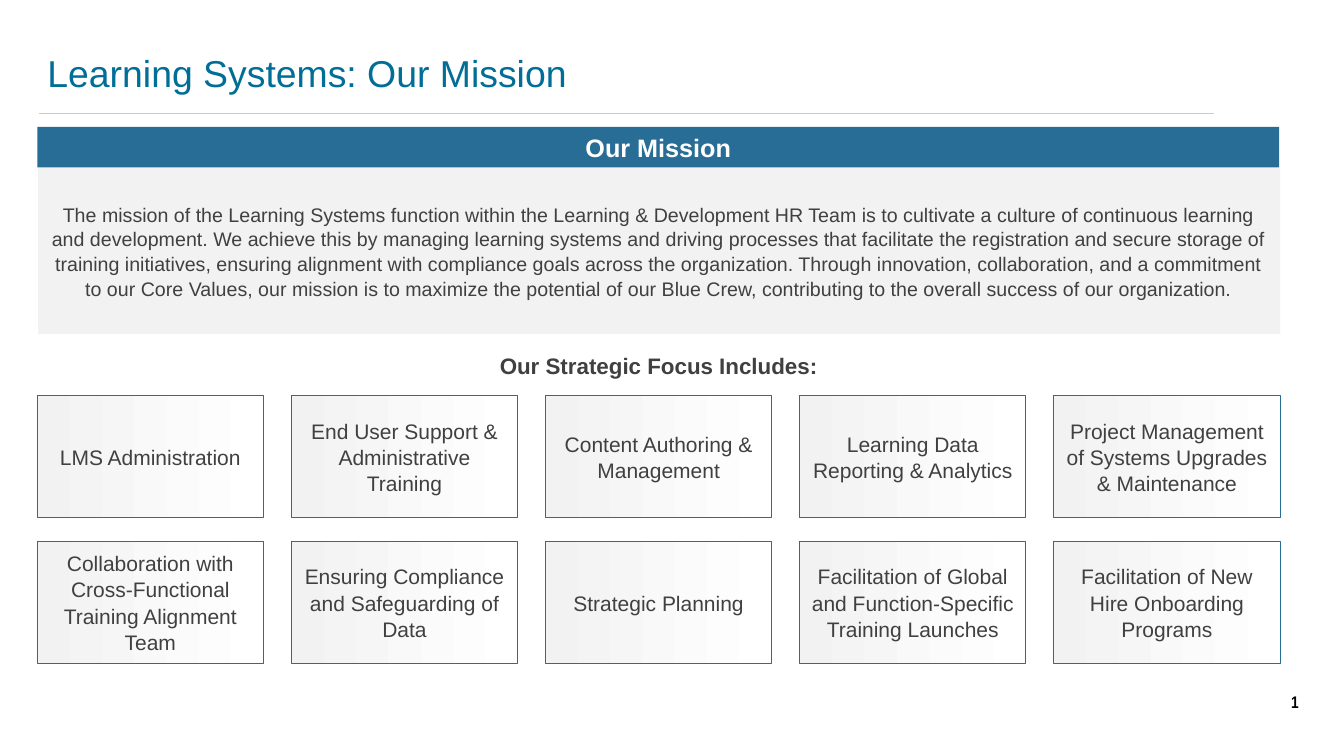
"""Build the Learning Systems mission slide."""
from lxml import etree
from pptx import Presentation
from pptx.dml.color import RGBColor
from pptx.enum.shapes import MSO_CONNECTOR, MSO_SHAPE
from pptx.enum.text import MSO_ANCHOR, MSO_AUTO_SIZE, PP_ALIGN
from pptx.oxml.ns import qn
from pptx.util import Cm, Pt

RECT = MSO_SHAPE.RECTANGLE
STRAIGHT = MSO_CONNECTOR.STRAIGHT
MIDDLE, BOTTOM = MSO_ANCHOR.MIDDLE, MSO_ANCHOR.BOTTOM
CENTER, LEFT = PP_ALIGN.CENTER, PP_ALIGN.LEFT
NO_FIT = MSO_AUTO_SIZE.NONE

WHITE = RGBColor(0xFF, 0xFF, 0xFF)
BLACK = RGBColor(0x00, 0x00, 0x00)
TEAL = RGBColor(0x00, 0x6E, 0x96)
BLUE = RGBColor(0x28, 0x6D, 0x96)
PALE = RGBColor(0xF2, 0xF2, 0xF2)
GRAY = RGBColor(0xCC, 0xCC, 0xCC)
DARK = RGBColor(0x40, 0x40, 0x40)

FONTS = {
    "title": {"name": "Arial", "size": Pt(26.7), "bold": False, "color": TEAL},
    "band": {"name": "Arial", "size": Pt(18), "bold": True, "color": WHITE},
    "body": {"name": "Arial", "size": Pt(14), "bold": False, "color": DARK},
    "head": {"name": "Arial", "size": Pt(16), "bold": True, "color": DARK},
    "tile": {"name": "Arial", "size": Pt(15), "bold": False, "color": DARK},
    "page": {"name": "Arial Narrow", "size": Pt(12), "bold": True, "color": BLACK},
}

MISSION = (
    "The mission of the Learning Systems function within the Learning & "
    "Development HR Team is to cultivate a culture of continuous learning and "
    "development. We achieve this by managing learning systems and driving "
    "processes that facilitate the registration and secure storage of training "
    "initiatives, ensuring alignment with compliance goals across the "
    "organization. Through innovation, collaboration, and a commitment to our "
    "Core Values, our mission is to maximize the potential of our Blue Crew, "
    "contributing to the overall success of our organization."
)
FOCUS = [
    ["LMS Administration", "End User Support & Administrative Training",
     "Content Authoring & Management", "Learning Data Reporting & Analytics",
     "Project Management of Systems Upgrades & Maintenance"],
    ["Collaboration with Cross-Functional Training Alignment Team",
     "Ensuring Compliance and Safeguarding of Data", "Strategic Planning",
     "Facilitation of Global and Function-Specific Training Launches",
     "Facilitation of New Hire Onboarding Programs"],
]


def write(shape, text, style, align=CENTER, anchor=MIDDLE, space=1.0):
    """Put one styled paragraph into a shape and return its run."""
    frame = shape.text_frame
    layout = {"word_wrap": True, "auto_size": NO_FIT, "vertical_anchor": anchor}
    for key, value in layout.items():
        setattr(frame, key, value)
    para = frame.paragraphs[0]
    para.alignment, para.line_spacing = align, space
    run = para.add_run()
    run.text = text
    for key, value in FONTS[style].items():
        if key == "color":
            run.font.color.rgb = value
        else:
            setattr(run.font, key, value)
    return run


def add_rect(slide, left, top, width, height):
    """Add a rectangle without shadow or outline, measured in centimetres."""
    rect = slide.shapes.add_shape(RECT, Cm(left), Cm(top), Cm(width), Cm(height))
    rect.shadow.inherit = False
    rect.line.fill.background()
    return rect


def add_title(slide, left, top, width, height):
    """Place the title with the thin rule below it."""
    title = slide.shapes.title
    box = {"left": left, "top": top, "width": width, "height": height}
    for key, value in box.items():
        setattr(title, key, Cm(value))
    write(title, "Learning Systems: Our Mission", "title", LEFT, BOTTOM)
    level = Cm(top + height + 0.36)
    rule = slide.shapes.add_connector(
        STRAIGHT, Cm(left + 0.05), level, Cm(left + width), level)
    rule.line.color.rgb = GRAY
    rule.line.width = Pt(0.75)
    etree.SubElement(rule._element.spPr, qn("a:effectLst"))


def add_mission(slide, left, top, width, height):
    """Place the blue band over the pale mission statement."""
    band = 1.02
    body = add_rect(slide, left + 0.02, top + band, width, height - band)
    head = add_rect(slide, left, top, width, band)
    for rect, color in ((body, PALE), (head, BLUE)):
        rect.fill.solid()
        rect.fill.fore_color.rgb = color
    write(body, MISSION, "body", space=1.05)
    write(head, "Our Mission", "band")


def add_tile(slide, text, left, top, width, height):
    """Place one outlined focus tile with a soft gradient."""
    tile = add_rect(slide, left, top, width, height)
    tile.fill.gradient()
    tile.fill.gradient_angle = 180
    for stop, color in zip(tile.fill.gradient_stops, (WHITE, PALE)):
        stop.color.rgb = color
    tile.line.color.rgb = BLUE
    tile.line.width = Pt(0.75)
    write(tile, text, "tile", space=1.05)


def add_focus(slide, left, top, width, height):
    """Place the focus heading and spread the tiles below it."""
    head = slide.shapes.add_textbox(Cm(left), Cm(top), Cm(width), Cm(1.02))
    write(head, "Our Strategic Focus Includes:", "head")
    wide, high, drop = 5.7, 3.07, 1.28
    step = (width - wide) / (len(FOCUS[0]) - 1)
    pitch = (height - drop - high) / (len(FOCUS) - 1)
    for row, texts in enumerate(FOCUS):
        for col, text in enumerate(texts):
            add_tile(slide, text, left + col * step,
                     top + drop + row * pitch, wide, high)


def add_page(slide, left, top, width, height):
    """Place the slide number as a live field."""
    box = slide.shapes.add_textbox(Cm(left), Cm(top), Cm(width), Cm(height))
    run = write(box, "1", "page")._r
    field = etree.Element(qn("a:fld"), type="slidenum",
                          id="{B6F15528-21DE-4FAA-801E-634DDDAF4B2B}")
    run.addprevious(field)
    field.extend(list(run))
    run.getparent().remove(run)


def main():
    """Build and save the slide."""
    deck = Presentation()
    deck.slide_width, deck.slide_height = Cm(33.87), Cm(19.05)
    slide = deck.slides.add_slide(deck.slide_layouts[5])
    add_title(slide, 0.94, 0.43, 29.66, 2.08)
    add_mission(slide, 0.94, 3.2, 31.3, 5.22)
    add_focus(slide, 0.94, 8.69, 31.32, 8.02)
    add_page(slide, 32, 17.17, 1.27, 1.02)
    deck.save("out.pptx")


if __name__ == "__main__":
    main()
